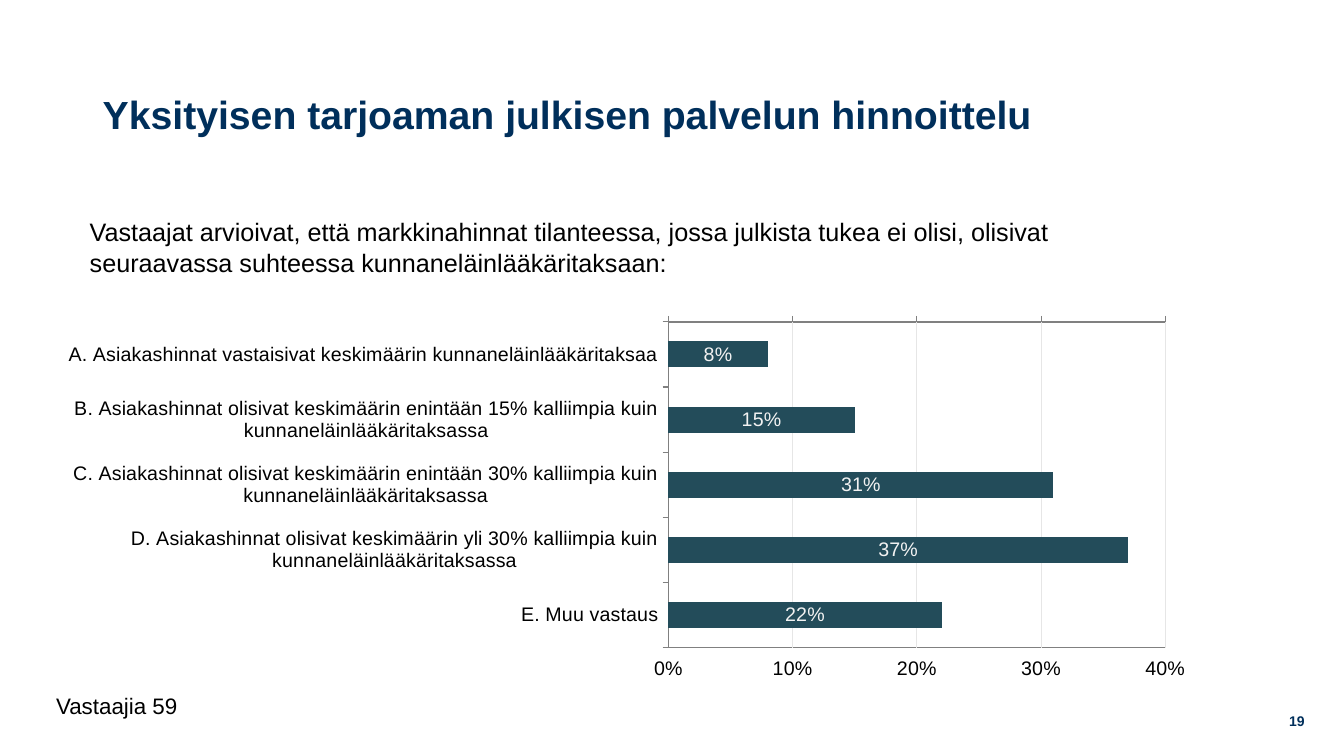
"""Build the slide on pricing of a public service offered by private providers."""
from pptx import Presentation
from pptx.chart.data import CategoryChartData
from pptx.dml.color import RGBColor
from pptx.enum.chart import XL_CHART_TYPE as ChartType
from pptx.enum.chart import XL_LABEL_POSITION as LabelPos
from pptx.enum.chart import XL_TICK_LABEL_POSITION as TickLabels
from pptx.enum.chart import XL_TICK_MARK as TickMark
from pptx.enum.text import MSO_ANCHOR as Anchor
from pptx.enum.text import PP_ALIGN as Align
from pptx.oxml import parse_xml
from pptx.oxml.ns import nsdecls
from pptx.util import Pt

COLORS = {
    "navy": "002F5B",
    "black": "000000",
    "bar": "234C5A",
    "label": "F2F2F2",
    "grid": "E6E6E6",
    "axis": "808080",
    "white": "FFFFFF",
}


def style_font(font, size, color, bold=False):
    font.name = "Arial"
    font.size = Pt(size)
    font.bold = bold
    font.color.rgb = RGBColor.from_string(COLORS[color])


def write_text(box, text, size, color, bold=False, align=Align.LEFT, anchor=Anchor.TOP):
    frame = box.text_frame
    frame.word_wrap = True
    frame.vertical_anchor = anchor
    paragraph = frame.paragraphs[0]
    paragraph.alignment = align
    run = paragraph.add_run()
    run.text = text
    style_font(run.font, size, color, bold)


deck = Presentation()
deck.slide_width, deck.slide_height = Pt(960), Pt(540)
slide = deck.slides.add_slide(deck.slide_layouts[5])

heading = slide.shapes.title
heading.left, heading.top, heading.width, heading.height = Pt(66.2), Pt(28.8), Pt(766), Pt(104.4)
write_text(heading, "Yksityisen tarjoaman julkisen palvelun hinnoittelu", 28, "navy",
           bold=True, anchor=Anchor.MIDDLE)

page_number = slide.shapes.add_textbox(Pt(723), Pt(500.4), Pt(216), Pt(28.8))
write_text(page_number, "19", 10, "navy", bold=True, align=Align.RIGHT, anchor=Anchor.MIDDLE)

question = slide.shapes.add_textbox(Pt(57), Pt(151.2), Pt(729.4), Pt(51))
write_text(question, "Vastaajat arvioivat, että markkinahinnat tilanteessa, jossa julkista tukea ei olisi, "
           "olisivat seuraavassa suhteessa kunnaneläinlääkäritaksaan:", 18, "black")

answers = {
    "A. Asiakashinnat vastaisivat keskimäärin kunnaneläinlääkäritaksaa": 0.08,
    "B. Asiakashinnat olisivat keskimäärin enintään 15% kalliimpia kuin kunnaneläinlääkäritaksassa": 0.15,
    "C. Asiakashinnat olisivat keskimäärin enintään 30% kalliimpia kuin kunnaneläinlääkäritaksassa": 0.31,
    "D. Asiakashinnat olisivat keskimäärin yli 30% kalliimpia kuin kunnaneläinlääkäritaksassa": 0.37,
    "E. Muu vastaus": 0.22,
}
shares = CategoryChartData(number_format="0%")
shares.categories = list(answers)
shares.add_series("Series 1", list(answers.values()))
chart = slide.shapes.add_chart(ChartType.BAR_CLUSTERED, Pt(33.8), Pt(224.6), Pt(831), Pt(266.4), shares).chart
chart.has_legend = False
chart.has_title = False
style_font(chart.font, 14, "black")

answer_axis, share_axis = chart.category_axis, chart.value_axis
answer_axis.reverse_order = True
share_axis.minimum_scale, share_axis.maximum_scale, share_axis.major_unit = 0, 0.4, 0.1
share_axis.tick_label_position = TickLabels.HIGH
share_axis.tick_labels.number_format = "0%"
share_axis.tick_labels.number_format_is_linked = False
share_axis.has_major_gridlines = True
share_axis.major_gridlines.format.line.width = Pt(0.75)
share_axis.major_gridlines.format.line.color.rgb = RGBColor.from_string(COLORS["grid"])
for axis in (answer_axis, share_axis):
    axis.major_tick_mark = TickMark.OUTSIDE
    axis.minor_tick_mark = TickMark.NONE
    axis.format.line.width = Pt(0.75)
    axis.format.line.color.rgb = RGBColor.from_string(COLORS["axis"])

bars = chart.plots[0]
bars.gap_width = 150
bars.vary_by_categories = False
bars.series[0].format.fill.solid()
bars.series[0].format.fill.fore_color.rgb = RGBColor.from_string(COLORS["bar"])
bars.has_data_labels = True
share_labels = bars.data_labels
share_labels.show_value = True
share_labels.position = LabelPos.CENTER
share_labels.number_format = "0%"
share_labels.number_format_is_linked = False
style_font(share_labels.font, 14, "label")

plot_area = chart.element.chart.plotArea
for old_layout in plot_area.findall("{*}layout"):
    plot_area.remove(old_layout)
plot_area.insert(0, parse_xml(
    f'<c:layout {nsdecls("c")}><c:manualLayout><c:layoutTarget val="inner"/>'
    '<c:xMode val="edge"/><c:yMode val="edge"/><c:x val="0.534"/><c:y val="0.02"/>'
    '<c:w val="0.427"/><c:h val="0.874"/></c:manualLayout></c:layout>'))
plot_area.append(parse_xml(
    f'<c:spPr {nsdecls("c", "a")}><a:solidFill><a:srgbClr val="{COLORS["white"]}"/></a:solidFill>'
    f'<a:ln w="12700"><a:solidFill><a:srgbClr val="{COLORS["axis"]}"/></a:solidFill></a:ln></c:spPr>'))

respondents = slide.shapes.add_textbox(Pt(33), Pt(491), Pt(107.3), Pt(26.6))
write_text(respondents, "Vastaajia 59", 16, "black")

deck.save("out.pptx")
